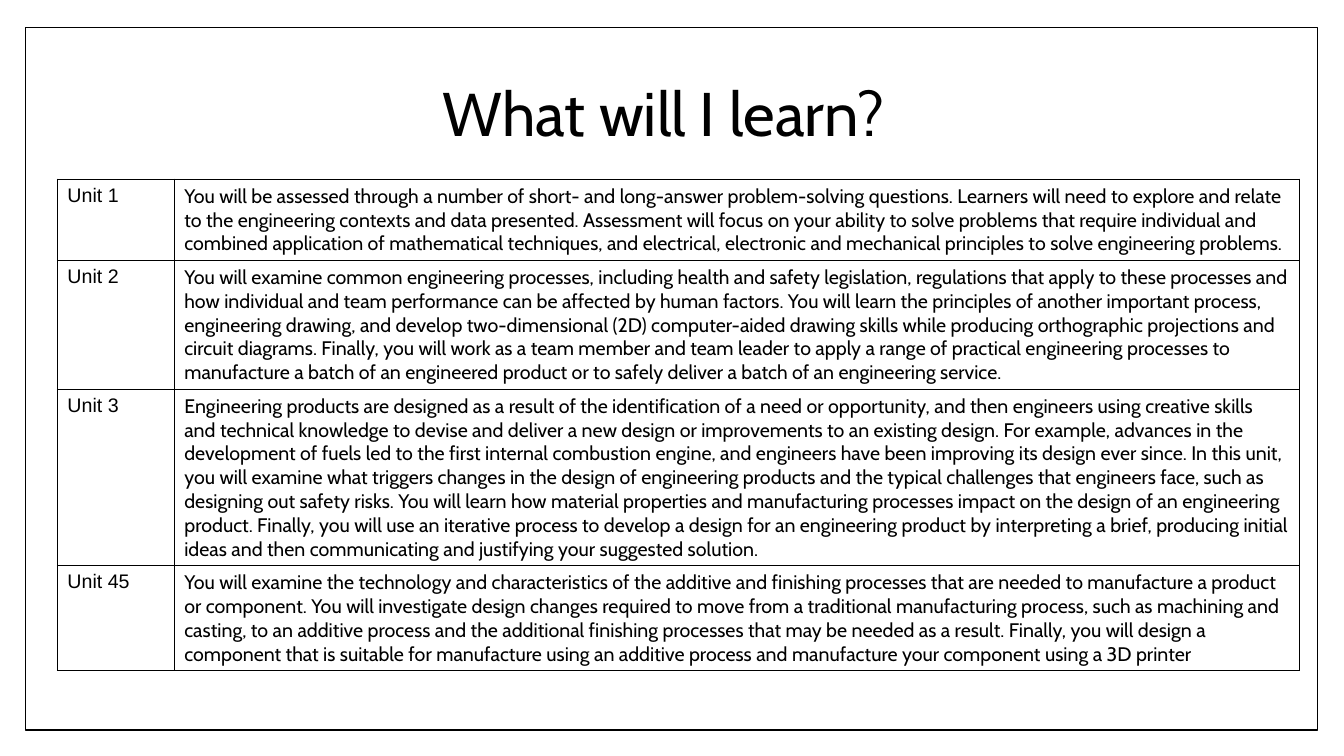
from lxml import etree
from pptx import Presentation
from pptx.dml.color import RGBColor
from pptx.enum.shapes import MSO_SHAPE
from pptx.enum.text import MSO_ANCHOR, PP_ALIGN
from pptx.oxml.ns import qn
from pptx.util import Pt

BLACK = RGBColor(0, 0, 0)
WHITE = RGBColor(255, 255, 255)
RECTANGLE = MSO_SHAPE.RECTANGLE
MIDDLE, TOP = MSO_ANCHOR.MIDDLE, MSO_ANCHOR.TOP
CENTER, LEFT = PP_ALIGN.CENTER, PP_ALIGN.LEFT

# Unit name, row height in points, sentences of the description
UNITS = [
    ("Unit 1", 58, [
        "You will be assessed through a number of short- and long-answer problem-solving questions.",
        "Learners will need to explore and relate to the engineering contexts and data presented.",
        "Assessment will focus on your ability to solve problems that require individual and combined "
        "application of mathematical techniques, and electrical, electronic and mechanical principles "
        "to solve engineering problems.",
    ]),
    ("Unit 2", 92, [
        "You will examine common engineering processes, including health and safety legislation, "
        "regulations that apply to these processes and how individual and team performance can be "
        "affected by human factors.",
        "You will learn the principles of another important process, engineering drawing, and develop "
        "two-dimensional (2D) computer-aided drawing skills while producing orthographic projections "
        "and circuit diagrams.",
        "Finally, you will work as a team member and team leader to apply a range of practical "
        "engineering processes to manufacture a batch of an engineered product or to safely deliver "
        "a batch of an engineering service.",
    ]),
    ("Unit 3", 126, [
        "Engineering products are designed as a result of the identification of a need or opportunity, "
        "and then engineers using creative skills and technical knowledge to devise and deliver a new "
        "design or improvements to an existing design.",
        "For example, advances in the development of fuels led to the first internal combustion engine, "
        "and engineers have been improving its design ever since.",
        "In this unit, you will examine what triggers changes in the design of engineering products and "
        "the typical challenges that engineers face, such as designing out safety risks.",
        "You will learn how material properties and manufacturing processes impact on the design of an "
        "engineering product.",
        "Finally, you will use an iterative process to develop a design for an engineering product by "
        "interpreting a brief, producing initial ideas and then communicating and justifying your "
        "suggested solution.",
    ]),
    ("Unit 45", 75, [
        "You will examine the technology and characteristics of the additive and finishing processes "
        "that are needed to manufacture a product or component.",
        "You will investigate design changes required to move from a traditional manufacturing process, "
        "such as machining and casting, to an additive process and the additional finishing processes "
        "that may be needed as a result.",
        "Finally, you will design a component that is suitable for manufacture using an additive process "
        "and manufacture your component using a 3D printer",
    ]),
]
COLUMN_WIDTHS = [83.5, 803.5]


def write_text(frame, text, font="Cabin", size=14, align=LEFT, anchor=TOP, line_spacing=1.0):
    frame.word_wrap = True
    frame.vertical_anchor = anchor
    paragraph = frame.paragraphs[0]
    paragraph.alignment = align
    paragraph.line_spacing = line_spacing
    run = paragraph.add_run()
    run.text = text
    run.font.name = font
    run.font.size = Pt(size)
    run.font.color.rgb = BLACK


def add_cell_borders(cell):
    """Draw a 1 pt black line on all four sides; lines precede the fill in tcPr."""
    properties = cell._tc.get_or_add_tcPr()
    for index, side in enumerate(("lnL", "lnR", "lnT", "lnB")):
        line = etree.Element(qn(f"a:{side}"), w=str(Pt(1)))
        fill = etree.SubElement(line, qn("a:solidFill"))
        etree.SubElement(fill, qn("a:srgbClr"), val=str(BLACK))
        properties.insert(index, line)


presentation = Presentation()
presentation.slide_width = Pt(960)
presentation.slide_height = Pt(540)
slide = presentation.slides.add_slide(presentation.slide_layouts[6])

border = slide.shapes.add_shape(RECTANGLE, Pt(18), Pt(19.5), Pt(923), Pt(502))
border.shadow.inherit = False
border.fill.solid()
border.fill.fore_color.rgb = WHITE
border.line.color.rgb = BLACK
border.line.width = Pt(1)

title = slide.shapes.add_textbox(Pt(90), Pt(30), Pt(778), Pt(106.5))
write_text(title.text_frame, "What will I learn? ", size=44, align=CENTER, anchor=MIDDLE, line_spacing=0.9)

table_height = sum(height for _, height, _ in UNITS)
table = slide.shapes.add_table(len(UNITS), len(COLUMN_WIDTHS), Pt(41), Pt(128),
                               Pt(sum(COLUMN_WIDTHS)), Pt(table_height)).table
table.first_row = False
table.horz_banding = False
for column, width in zip(table.columns, COLUMN_WIDTHS):
    column.width = Pt(width)

for row, (unit, height, sentences) in zip(table.rows, UNITS):
    row.height = Pt(height)
    for cell, text, font in zip(row.cells, (unit, " ".join(sentences)), ("Arial", "Cabin")):
        write_text(cell.text_frame, text, font=font)
        cell.fill.background()
        add_cell_borders(cell)

presentation.save("out.pptx")
